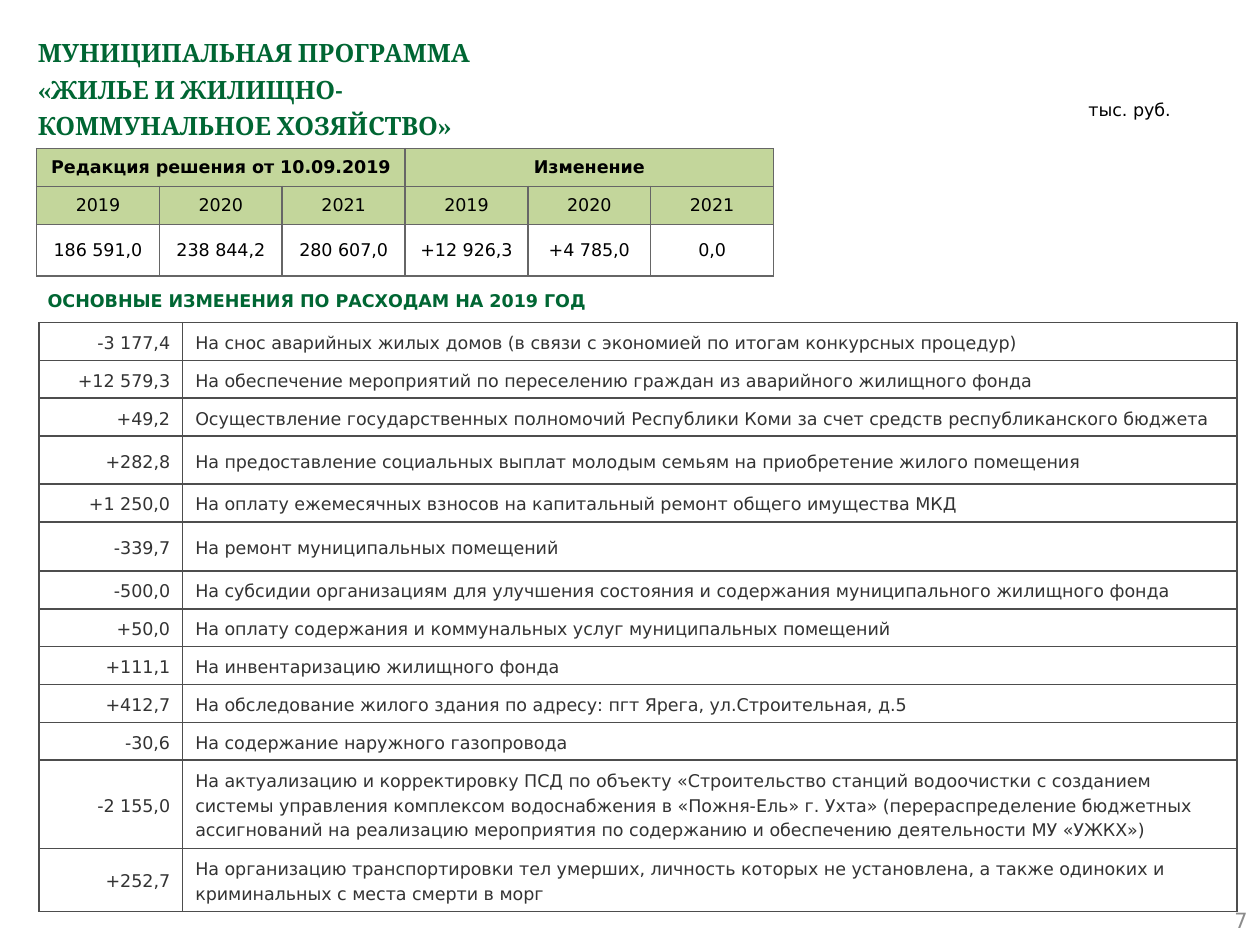
from lxml import etree
from pptx import Presentation
from pptx.dml.color import RGBColor
from pptx.enum.shapes import MSO_SHAPE
from pptx.enum.text import MSO_ANCHOR, MSO_AUTO_SIZE, PP_ALIGN
from pptx.oxml.ns import qn
from pptx.util import Inches, Pt

LEFT, MID, RIGHT = PP_ALIGN.LEFT, PP_ALIGN.CENTER, PP_ALIGN.RIGHT
TOP, CENTER = MSO_ANCHOR.TOP, MSO_ANCHOR.MIDDLE
PLATE = MSO_SHAPE.PENTAGON

COLORS = {"green": "006633", "head": "C3D69B", "black": "000000",
          "text": "333333", "page": "8C8C8C", "grid": "4D4D4D", "edge": "666666"}
SANS = "DejaVu Sans"


def write(frame, text, color, size=10, bold=False, align=LEFT, gap=None, face=SANS):
    frame.text = text
    frame.word_wrap = True
    para = frame.paragraphs[0]
    para.alignment = align
    if gap:
        para.line_spacing = gap
    style = {"name": face, "size": Pt(size), "bold": bold}
    for run in para.runs:
        for key, value in style.items():
            setattr(run.font, key, value)
        run.font.color.rgb = RGBColor.from_string(COLORS[color])


def dress(cell, line, fill=None):
    cell.vertical_anchor = CENTER
    props = cell._tc.get_or_add_tcPr()
    for side in ("a:lnL", "a:lnR", "a:lnT", "a:lnB"):
        edge = etree.SubElement(props, qn(side), w=str(Pt(1)))
        solid = etree.SubElement(edge, qn("a:solidFill"))
        etree.SubElement(solid, qn("a:srgbClr"), val=COLORS[line])
    if fill:
        cell.fill.solid()
        cell.fill.fore_color.rgb = RGBColor.from_string(COLORS[fill])
    else:
        cell.fill.background()


deck = Presentation()
deck.slide_width, deck.slide_height = Inches(10), Inches(7.5)
slide = deck.slides.add_slide(deck.slide_layouts[5])
shapes = slide.shapes

# Title
title = shapes.title
title.left, title.top = Inches(0.2), Inches(0.2)
title.width, title.height = Inches(9.61), Inches(0.79)
lines = ["МУНИЦИПАЛЬНАЯ ПРОГРАММА ", "«ЖИЛЬЕ И ЖИЛИЩНО-", "КОММУНАЛЬНОЕ ХОЗЯЙСТВО»"]
write(title.text_frame, "\v".join(lines), "green", 14.4, True, gap=1.2, face="Cambria")
title.text_frame.vertical_anchor = TOP
title.text_frame.auto_size = MSO_AUTO_SIZE.NONE

# Page number and unit
notes = [
    ("7", (7.67, 7.1, 2.33, 0.4), CENTER, {"color": "page", "size": 12, "align": RIGHT}),
    ("тыс. руб.", (8.54, 0.7, 1.01, 0.3), TOP, {"color": "black", "gap": 1.2}),
]
for text, place, anchor, style in notes:
    box = shapes.add_textbox(*map(Inches, place))
    write(box.text_frame, text, **style)
    box.text_frame.vertical_anchor = anchor

# Section heading
plate = shapes.add_shape(PLATE, Inches(0.28), Inches(2.17), Inches(5.32), Inches(0.43))
plate.adjustments[0] = 0
plate.shadow.inherit = False
plate.fill.background()
plate.line.fill.background()
write(plate.text_frame, "ОСНОВНЫЕ ИЗМЕНЕНИЯ ПО РАСХОДАМ НА 2019 ГОД", "green", bold=True)
plate.text_frame.vertical_anchor = CENTER

# Changes in spending
changes = [
    ("-3 177,4", "На снос аварийных жилых домов (в связи с экономией по итогам конкурсных процедур)"),
    ("+12 579,3", "На обеспечение мероприятий по переселению граждан из аварийного жилищного фонда"),
    ("+49,2", "Осуществление государственных полномочий Республики Коми "
              "за счет средств республиканского бюджета"),
    ("+282,8", "На предоставление социальных выплат молодым семьям на приобретение жилого помещения"),
    ("+1 250,0", "На оплату ежемесячных взносов на капитальный ремонт общего имущества МКД"),
    ("-339,7", "На ремонт муниципальных помещений"),
    ("-500,0", "На субсидии организациям для улучшения состояния и содержания "
               "муниципального жилищного фонда"),
    ("+50,0", "На оплату содержания и коммунальных услуг муниципальных помещений"),
    ("+111,1", "На инвентаризацию жилищного фонда"),
    ("+412,7", "На обследование жилого здания по адресу: пгт Ярега, ул.Строительная, д.5"),
    ("-30,6", "На содержание наружного газопровода"),
    ("-2 155,0", "На актуализацию и корректировку ПСД по объекту «Строительство станций "
                 "водоочистки с созданием системы управления комплексом водоснабжения в "
                 "«Пожня-Ель» г. Ухта» (перераспределение бюджетных ассигнований на реализацию "
                 "мероприятия по содержанию и обеспечению деятельности МУ «УЖКХ»)"),
    ("+252,7", "На организацию транспортировки тел умерших, личность которых не установлена, "
               "а также одиноких и криминальных с места смерти в морг"),
]
tall = {0: 0.3, 3: 0.38, 4: 0.3, 5: 0.39}
frame = shapes.add_table(len(changes), 2, Inches(0.31), Inches(2.56), Inches(9.51), Inches(3.9))
table = frame.table
table.first_row = table.horz_banding = False
for col, width in zip(table.columns, (1.14, 8.37)):
    col.width = Inches(width)
for r, row in enumerate(changes):
    table.rows[r].height = Inches(tall.get(r, 0.28))
    for c, text in enumerate(row):
        cell = table.cell(r, c)
        write(cell.text_frame, text, "text", align=(RIGHT, LEFT)[c], gap=1.2)
        dress(cell, "grid")

# Totals by year
years = ["2019", "2020", "2021"]
totals = [
    ["Редакция решения от 10.09.2019", "", "", "Изменение", "", ""],
    years * 2,
    ["186 591,0", "238 844,2", "280 607,0", "+12 926,3", "+4 785,0", "0,0"],
]
frame = shapes.add_table(3, 6, Inches(0.29), Inches(1.18), Inches(5.85), Inches(1))
table = frame.table
table.first_row = table.horz_banding = False
for col in table.columns:
    col.width = Inches(5.85 / 6)
for r, row in enumerate(totals):
    table.rows[r].height = Inches((0.3, 0.3, 0.41)[r])
    for c, text in enumerate(row):
        cell = table.cell(r, c)
        write(cell.text_frame, text, "black", bold=r == 0, align=MID)
        dress(cell, "edge", "head" if r < 2 else None)
        for side in ("left", "right", "top", "bottom"):
            setattr(cell, "margin_" + side, Inches(0.05))
for c in (0, 3):
    table.cell(0, c).merge(table.cell(0, c + 2))

deck.save("out.pptx")
